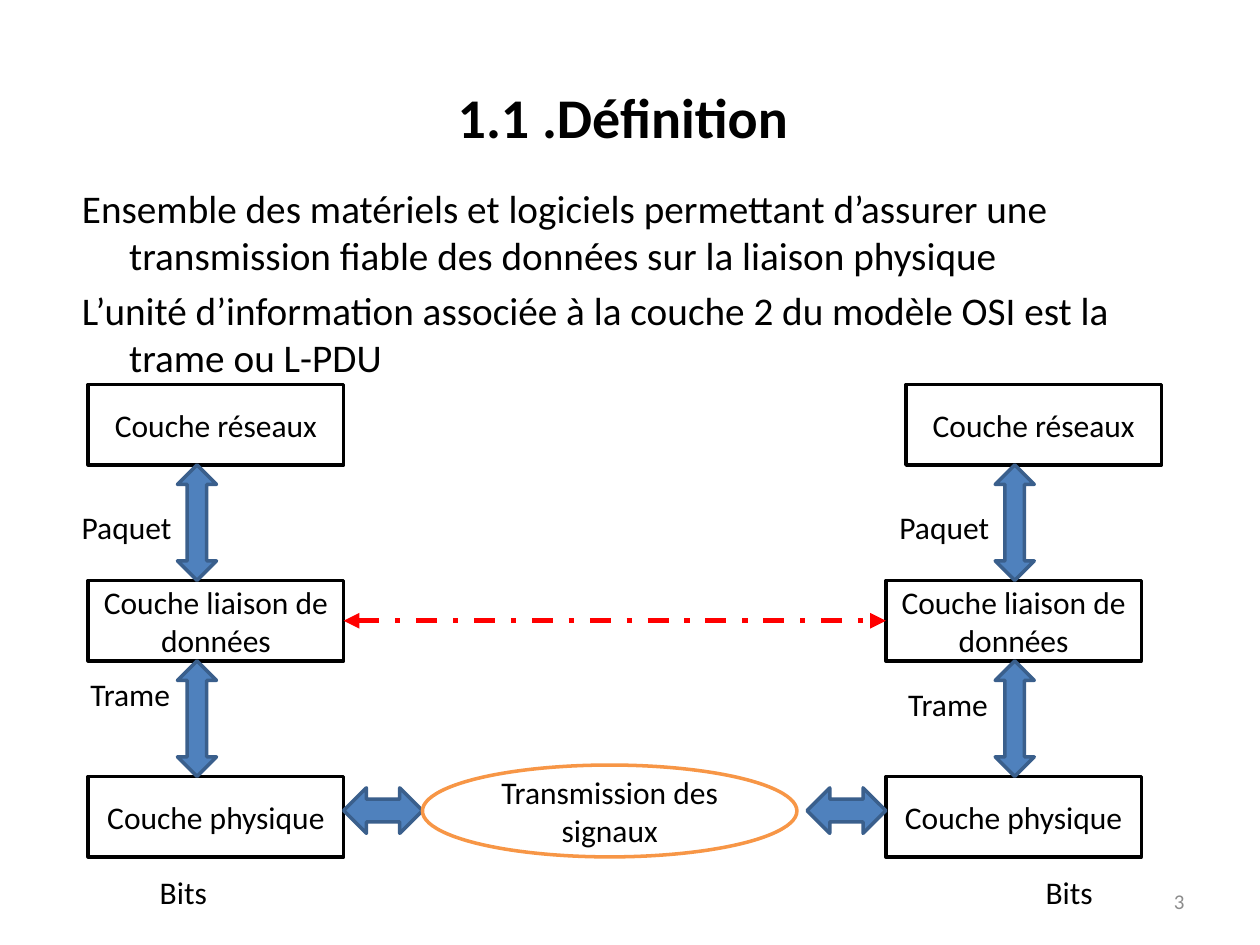
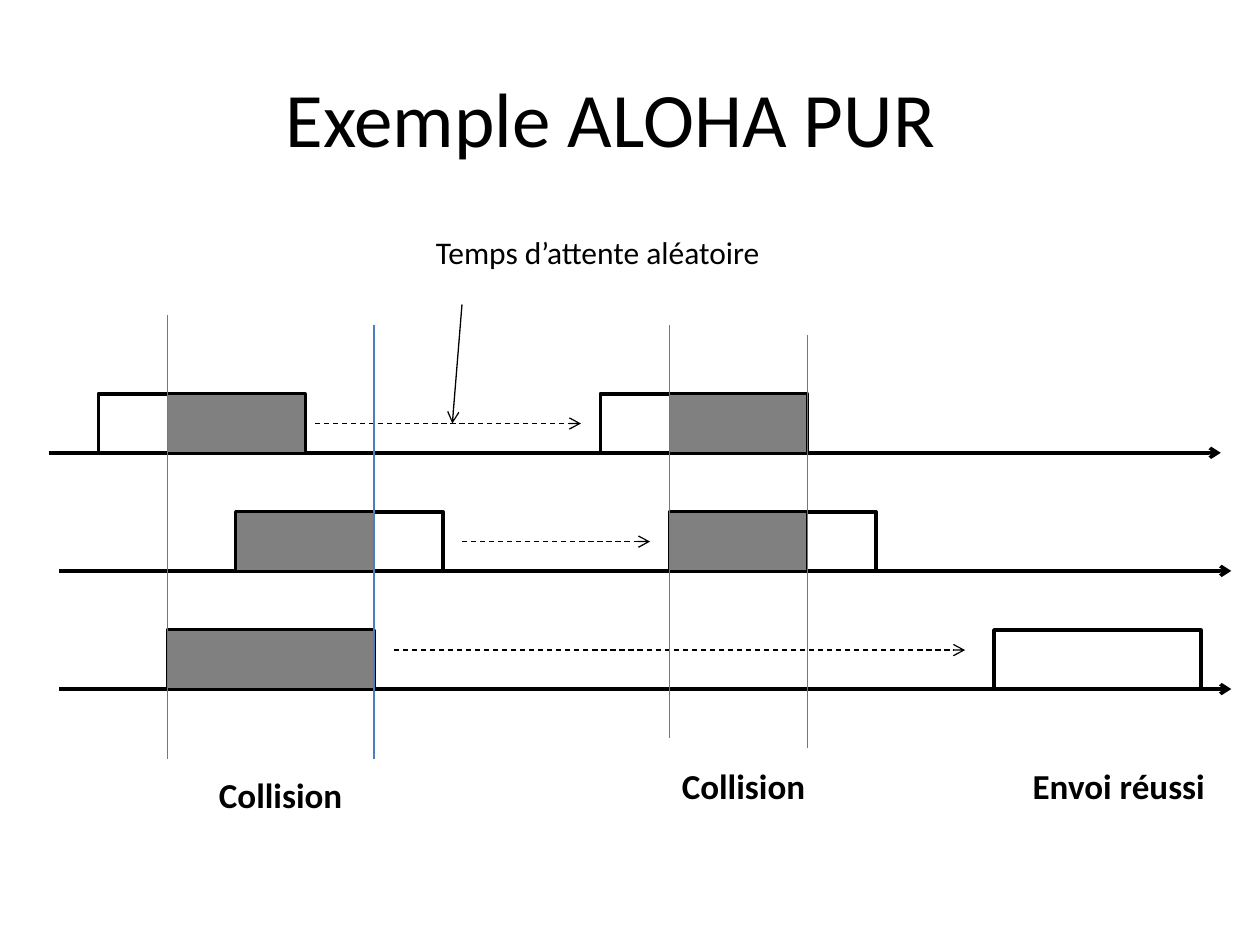
import lxml.etree
import pptx
import pptx.dml.color
import pptx.enum.dml
import pptx.enum.shapes
import pptx.enum.text
import pptx.oxml
import pptx.oxml.ns
import pptx.util

Pt = pptx.util.Pt
qn = pptx.oxml.ns.qn
SHAPE = pptx.enum.shapes.MSO_SHAPE
ALIGN = pptx.enum.text.PP_ALIGN
ANCHOR = pptx.enum.text.MSO_ANCHOR
DASH = pptx.enum.dml.MSO_LINE

FONT = "Calibri"
COLORS = {
    "text": "000000",
    "paper": "FFFFFF",
    "arrow": "4F81BD",
    "arrow_edge": "3A5F8C",
    "signal": "F79646",
    "dialogue": "FF0000",
    "number": "8C8C8C",
    "collision": "808080",
    "limit": "4B7EBC",
}

# Layer diagram
LAYER_WIDTH, LAYER_HEIGHT, LAYER_PITCH = 146, 46, 112
LAYERS = ["Couche réseaux", "Couche liaison de données", "Couche physique"]

# Time diagram
SLOT = 39.4
FRAME_SLOTS = 3
FRAME_HEIGHT, STATION_PITCH = 33.75, 67.5
AXIS_LENGTH = 669.6


def rgb(name):
    return pptx.dml.color.RGBColor.from_string(COLORS[name])


def format_paragraph(paragraph, size, bold=False, align=None):
    paragraph.alignment = align
    paragraph.font.name = FONT
    paragraph.font.size = Pt(size)
    paragraph.font.bold = bold
    paragraph.font.color.rgb = rgb("text")


def set_title(slide, text, left, size, bold=False):
    title = slide.shapes.title
    title.left, title.top, title.width, title.height = Pt(left), Pt(21.6), Pt(648), Pt(90)
    title.text_frame.text = text
    title.text_frame.vertical_anchor = ANCHOR.MIDDLE
    format_paragraph(title.text_frame.paragraphs[0], size, bold, ALIGN.CENTER)


def set_body(slide, texts, left, top, width, height):
    body = slide.placeholders[1]
    body.left, body.top, body.width, body.height = Pt(left), Pt(top), Pt(width), Pt(height)
    frame = body.text_frame
    frame.auto_size = pptx.enum.text.MSO_AUTO_SIZE.NONE
    frame.text = "\n".join(texts)
    for index, paragraph in enumerate(frame.paragraphs):
        properties = paragraph._p.get_or_add_pPr()
        properties.set("marL", str(Pt(27)))
        properties.set("indent", str(Pt(-27)))
        lxml.etree.SubElement(properties, qn("a:buNone"))
        paragraph.space_before = Pt(4.5 if index else 0)
        format_paragraph(paragraph, 22.4)


def add_label(slide, text, left, top, width, height=29, size=18, bold=False):
    label = slide.shapes.add_textbox(Pt(left), Pt(top), Pt(width), Pt(height))
    label.text_frame.word_wrap = False
    label.text_frame.text = text
    format_paragraph(label.text_frame.paragraphs[0], size, bold)


def add_slide_number(slide, left, top, width, height):
    box = slide.shapes.add_textbox(Pt(left), Pt(top), Pt(width), Pt(height))
    box.text_frame.word_wrap = True
    box.text_frame.vertical_anchor = ANCHOR.MIDDLE
    paragraph = box.text_frame.paragraphs[0]
    paragraph.alignment = ALIGN.RIGHT
    paragraph._p.append(pptx.oxml.parse_xml(
        f'<a:fld {pptx.oxml.ns.nsdecls("a")} type="slidenum" '
        'id="{B6F15528-21DE-4FAA-801E-634DDDAF4B2B}">'
        f'<a:rPr lang="fr-FR" sz="1200"><a:solidFill><a:srgbClr val="{COLORS["number"]}"/>'
        f'</a:solidFill><a:latin typeface="{FONT}"/></a:rPr><a:t>3</a:t></a:fld>'))


def add_figure(slide, kind, left, top, width, height, fill="paper", line="text", text=""):
    figure = slide.shapes.add_shape(kind, Pt(left), Pt(top), Pt(width), Pt(height))
    figure.shadow.inherit = False
    figure.fill.solid()
    figure.fill.fore_color.rgb = rgb(fill)
    figure.line.color.rgb = rgb(line)
    figure.line.width = Pt(2)
    if text:
        figure.text_frame.word_wrap = True
        figure.text_frame.vertical_anchor = ANCHOR.MIDDLE
        figure.text_frame.text = text
        format_paragraph(figure.text_frame.paragraphs[0], 18, align=ALIGN.CENTER)
    return figure


def add_double_arrow(slide, kind, left, top, width, height):
    add_figure(slide, kind, left, top, width, height, "arrow", "arrow_edge")


def add_line(slide, start, end, color="text", width=0.75, dash=None, head=None, tail=None):
    line = slide.shapes.add_connector(
        pptx.enum.shapes.MSO_CONNECTOR.STRAIGHT, *map(Pt, start), *map(Pt, end))
    line.line.color.rgb = rgb(color)
    line.line.width = Pt(width)
    if dash:
        line.line.dash_style = dash
    outline = line.line._get_or_add_ln()
    for tag, kind in (("a:headEnd", head), ("a:tailEnd", tail)):
        if kind:
            lxml.etree.SubElement(outline, qn(tag)).set("type", kind)
    lxml.etree.SubElement(line._element.spPr, qn("a:effectLst"))
    return line


def add_layer_stack(slide, left, top, shift, frame_label_top, bits_left):
    """Draw one station; shift moves its top layer, arrows and labels sideways."""
    boxes = []
    for index, name in enumerate(LAYERS):
        box_left = left if index else left + shift
        boxes.append(add_figure(slide, SHAPE.RECTANGLE, box_left, top + index * LAYER_PITCH,
                                LAYER_WIDTH, LAYER_HEIGHT, text=name))
    for index in range(len(LAYERS) - 1):
        add_double_arrow(slide, SHAPE.UP_DOWN_ARROW, left + shift + 51,
                         top + LAYER_HEIGHT + index * LAYER_PITCH,
                         22.3, LAYER_PITCH - LAYER_HEIGHT)
    add_label(slide, "Paquet", left + shift - 10.8, top + 67, 83)
    add_label(slide, "Trame", left + shift - 5.8, top + frame_label_top, 72)
    add_label(slide, "Bits", left + bits_left, top + 275.7, 50)
    return boxes


def add_transmission(slide, left, top, width):
    """Fill the gap between the two physical layers."""
    arrow_width, arrow_height = 45, 26
    for arrow_left in (left, left + width - arrow_width):
        add_double_arrow(slide, SHAPE.LEFT_RIGHT_ARROW, arrow_left, top + 6.5,
                         arrow_width, arrow_height)
    add_figure(slide, SHAPE.OVAL, left + arrow_width, top - 6.5, 214, 52.5,
               line="signal", text="Transmission des signaux")


def build_definition(presentation):
    slide = presentation.slides.add_slide(presentation.slide_layouts[1])
    set_title(slide, "1.1 .Définition", 32, 32, bold=True)
    set_body(slide, [
        "Ensemble des matériels et logiciels permettant d’assurer une "
        "transmission fiable des données sur la liaison physique",
        "L’unité d’information associée à la couche 2 du modèle OSI est la trame ou L-PDU",
    ], 39.6, 101.5, 648, 101.5)
    left, right, top = 50.4, 506.2, 219.7
    sender = add_layer_stack(slide, left, top, 0, 162.6, 33.8)
    receiver = add_layer_stack(slide, right, top, 11.5, 168.4, 84.2)
    gap_left = left + LAYER_WIDTH
    add_transmission(slide, gap_left, top + 2 * LAYER_PITCH, right - gap_left)
    dialogue = add_line(slide, (gap_left, 355), (right, 355), "dialogue", 3,
                        DASH.DASH_DOT, "triangle", "triangle")
    dialogue.begin_connect(sender[1], 3)
    dialogue.end_connect(receiver[1], 1)
    add_slide_number(slide, 516.2, 500.4, 167.8, 28.8)


def add_collided_part(slide, left, top, width):
    table_frame = slide.shapes.add_table(1, 1, Pt(left), Pt(top), Pt(width), Pt(FRAME_HEIGHT))
    table = table_frame.table
    table.first_row = table.horz_banding = False
    cell = table.cell(0, 0)
    properties = cell._tc.get_or_add_tcPr()
    for side in ("lnL", "lnR", "lnT", "lnB"):
        properties.append(pptx.oxml.parse_xml(
            f'<a:{side} {pptx.oxml.ns.nsdecls("a")} w="{Pt(1)}"><a:solidFill>'
            f'<a:srgbClr val="{COLORS["text"]}"/></a:solidFill></a:{side}>'))
    cell.fill.solid()
    cell.fill.fore_color.rgb = rgb("collision")


def add_station(slide, top, axis_left, frames, wait):
    """Draw a time axis; frames are (left, collided slots before, collided slots)."""
    for left, _, _ in frames:
        add_figure(slide, SHAPE.RECTANGLE, left, top, FRAME_SLOTS * SLOT, FRAME_HEIGHT)
    axis_top = top + FRAME_HEIGHT
    add_line(slide, (axis_left, axis_top), (axis_left + AXIS_LENGTH, axis_top),
             width=2, tail="arrow")
    for left, offset, slots in frames:
        if slots:
            add_collided_part(slide, left + offset * SLOT, top, slots * SLOT)
    wait_left, wait_right, wait_offset = wait
    wait_top = top + wait_offset
    add_line(slide, (wait_left, wait_top), (wait_right, wait_top),
             dash=DASH.DASH, tail="arrow")


def add_collision_limits(slide, left, slots, spans):
    for x, (top, bottom) in zip((left, left + slots * SLOT), spans):
        add_line(slide, (x, top), (x, bottom), "limit")


def build_pure_aloha(presentation):
    slide = presentation.slides.add_slide(presentation.slide_layouts[5])
    set_title(slide, "Exemple ALOHA PUR", 25, 44)
    first_collision, second_collision = 95.6, 382.5
    stations = [
        (28, [(first_collision - SLOT, 1, 2), (second_collision - SLOT, 1, 2)],
         (180, 332, 17)),
        (34, [(first_collision + SLOT, 0, 2), (second_collision, 0, 2)],
         (264, 371.5, 17)),
        (34, [(first_collision, 0, 3), (568, 0, 0)],
         (225, 551.5, 11.5)),
    ]
    for index, station in enumerate(stations):
        add_station(slide, 225 + index * STATION_PITCH, *station)
    add_collision_limits(slide, first_collision, 3, [(180, 433.5), (186, 433.5)])
    add_collision_limits(slide, second_collision, 2, [(186, 422), (191.5, 427.7)])
    for text, left, top, width in [("Collision", 118, 438.5, 90),
                                   ("Collision", 382.5, 433.5, 90),
                                   ("Envoi réussi", 583, 433.5, 123)]:
        add_label(slide, text, left, top, width, 31.5, 20, bold=True)
    add_label(slide, "Temps d’attente aléatoire", 242, 129.6, 210)
    add_line(slide, (264, 174), (258.5, 242), tail="arrow")


def main():
    presentation = pptx.Presentation()
    presentation.slide_width, presentation.slide_height = Pt(720), Pt(540)
    presentation.element.set("firstSlideNum", "3")
    build_definition(presentation)
    build_pure_aloha(presentation)
    presentation.save("out.pptx")


if __name__ == "__main__":
    main()
